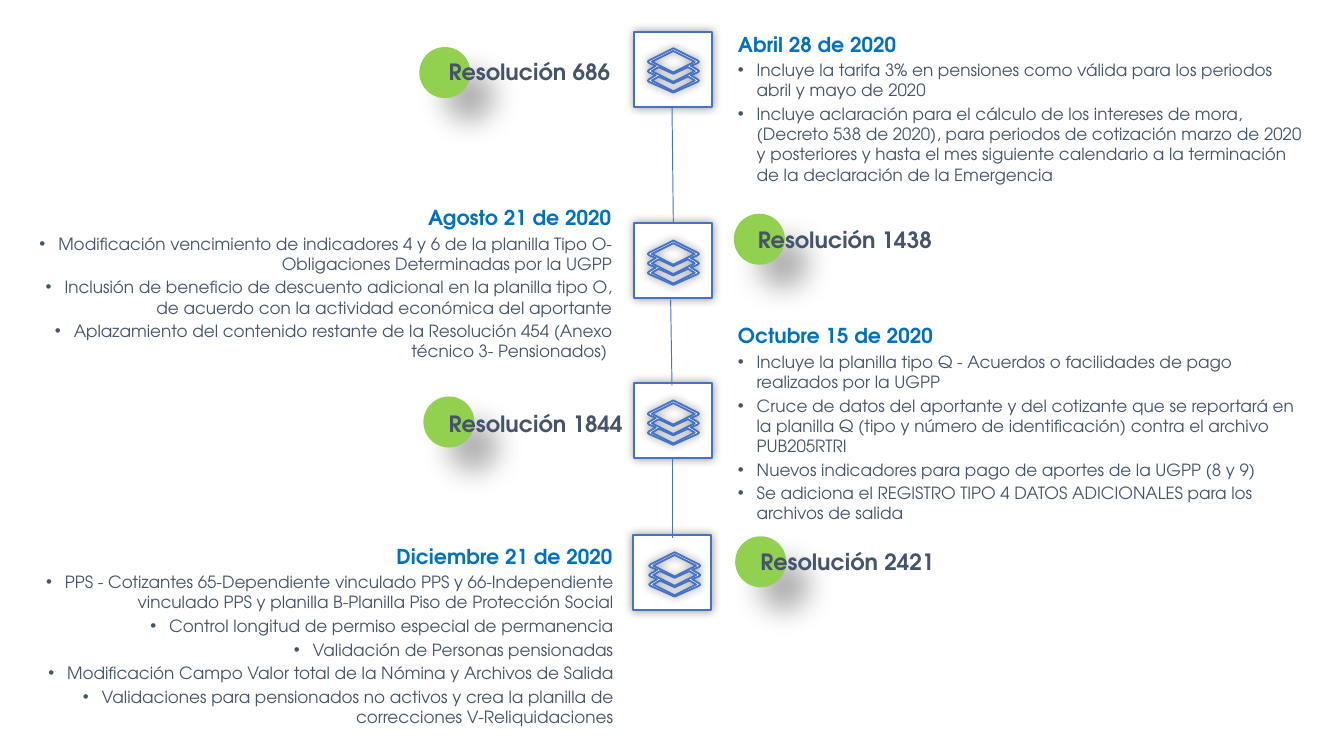
from dataclasses import dataclass

from lxml import etree
from pptx import Presentation
from pptx import util as u
from pptx.dml.color import RGBColor
from pptx.enum import shapes, text
from pptx.oxml.ns import qn

FONT = "TeX Gyre Adventor"
COLORS = {
    "background": "FFFFFF",
    "accent": "4472C4",
    "dot": "92D050",
    "date": "0070C0",
    "body": "44546A",
    "shadow": "000000",
}

# The 16:9 slide is a grid of square cells, 100 columns wide and 56.25 rows high.
COLUMNS, ROWS = 100, 56.25
CELL = u.Inches(10) / COLUMNS

NODE_WIDTH, NODE_HEIGHT = 5.8, 5.6
DOT_SIZE = 3.8
LABEL_HEIGHT = 3
NOTE_INSETS = (1.8, 0.9)

# Icon outlines in tenths of a cell, from the top centre of the icon.
RIGHT_EDGE = [
    (0, 0), (18, 9), (19, 10), (18, 11), (13, 13), (18, 16), (19, 17),
    (18, 18), (13, 20), (18, 23), (19, 24), (18, 25), (0, 33),
]
OUTLINE = RIGHT_EDGE + [(-x, y) for x, y in RIGHT_EDGE[-2:0:-1]]
TOP_SHEET = [(0, 2), (-16, 10), (0, 18), (16, 10)]
MIDDLE_SHEET = [(0, 25), (-16, 17), (-11, 14), (0, 19), (11, 14), (16, 17)]
BOTTOM_SHEET = [(x, y + 7) for x, y in MIDDLE_SHEET]


@dataclass(frozen=True)
class Shadow:
    opacity: int
    blur: float
    distance: float
    angle: int


@dataclass(frozen=True)
class Box:
    left: float
    top: float
    width: float
    height: float


@dataclass(frozen=True)
class Milestone:
    resolution: str
    date: str
    changes: tuple[str, ...]
    node_center: tuple[float, float]
    icon_top: tuple[float, float]
    dot: tuple[float, float]
    label: Box
    note: Box
    note_align: text.PP_ALIGN


GLOW = Shadow(40, 5, 0, 0)
DROP = Shadow(30, 15, 18, 45)
LEFT, RIGHT = text.PP_ALIGN.LEFT, text.PP_ALIGN.RIGHT

MILESTONES = [
    Milestone(
        "Resolución 686", "Abril 28 de 2020",
        ("Incluye la tarifa 3% en pensiones como válida para los periodos abril y mayo de 2020",
         "Incluye aclaración para el cálculo de los intereses de mora, (Decreto 538 de 2020), "
         "para periodos de cotización marzo de 2020 y posteriores y hasta el mes siguiente "
         "calendario a la terminación de la declaración de la Emergencia"),
        (50.1, 5.2), (50.1, 3.6), (31.2, 3.5), Box(32.4, 3.8, 17.7, LABEL_HEIGHT),
        Box(53.1, 1.1, 46.2, 13.7), LEFT),
    Milestone(
        "Resolución 1438", "Agosto 21 de 2020",
        ("Modificación vencimiento de indicadores 4 y 6 de la planilla Tipo O-Obligaciones "
         "Determinadas por la UGPP",
         "Inclusión de beneficio de descuento adicional en la planilla tipo O, de acuerdo con "
         "la actividad económica del aportante",
         "Aplazamiento del contenido restante de la Resolución 454 (Anexo técnico 3- Pensionados) "),
        (50.1, 19.4), (50.1, 17.9), (54.6, 15.9), Box(55.4, 16.3, 24.6, LABEL_HEIGHT),
        Box(0, 14, 47.3, 14), RIGHT),
    Milestone(
        "Resolución 1844", "Octubre 15 de 2020",
        ("Incluye la planilla tipo Q - Acuerdos o facilidades de pago realizados por la UGPP",
         "Cruce de datos del aportante y del cotizante que se reportará en la planilla Q "
         "(tipo y número de identificación) contra el archivo PUB205RTRI",
         "Nuevos indicadores para pago de aportes de la UGPP (8 y 9)",
         "Se adiciona el REGISTRO TIPO 4 DATOS ADICIONALES para los archivos de salida"),
        (50.1, 31.3), (50.1, 29.8), (31.5, 29.5), Box(32.4, 30, 17.7, LABEL_HEIGHT),
        Box(53.1, 22.8, 46.2, 17.4), LEFT),
    Milestone(
        "Resolución 2421", "Diciembre 21 de 2020",
        ("PPS - Cotizantes 65-Dependiente vinculado PPS y 66-Independiente vinculado PPS y "
         "planilla B-Planilla Piso de Protección Social",
         "Control longitud de permiso especial de permanencia",
         "Validación de Personas pensionadas",
         "Modificación Campo Valor total de la Nómina y Archivos de Salida",
         "Validaciones para pensionados no activos y crea la planilla de correcciones "
         "V-Reliquidaciones"),
        (50, 42.6), (50.2, 41.1), (54.7, 39.9), Box(55.6, 40.3, 24.6, LABEL_HEIGHT),
        Box(0.1, 39.2, 47.3, 16.1), RIGHT),
]
LINKS = [(50, 7.9, 50.1, 16.6), (49.9, 22.3, 50, 28.7), (50, 34.1, 50, 40)]


def cells(*counts: float) -> list[int]:
    """Convert numbers of grid cells to slide lengths."""
    return [u.Emu(round(count * CELL)) for count in counts]


def color(name: str) -> RGBColor:
    return RGBColor.from_string(COLORS[name])


def add_effects(shape, shadow: Shadow | None = None) -> None:
    """Replace the theme effects with the given shadow, or with none."""
    effects = etree.SubElement(shape._element.spPr, qn("a:effectLst"))
    if shadow is None:
        return
    outer = etree.SubElement(
        effects, qn("a:outerShdw"), blurRad=str(u.Pt(shadow.blur)),
        dist=str(u.Pt(shadow.distance)), dir=str(shadow.angle * 60000),
        algn="ctr", rotWithShape="0")
    tint = etree.SubElement(outer, qn("a:srgbClr"), val=COLORS["shadow"])
    etree.SubElement(tint, qn("a:alpha"), val=str(shadow.opacity * 1000))


def paint(shape, fill: str, line: str | None, shadow: Shadow) -> None:
    shape.fill.solid()
    shape.fill.fore_color.rgb = color(fill)
    if line is None:
        shape.line.fill.background()
    else:
        shape.line.color.rgb = color(line)
        shape.line.width = u.Pt(1)
    add_effects(shape, shadow)


def add_node(slide, milestone: Milestone) -> None:
    """Draw a framed icon of stacked sheets."""
    x, y = milestone.node_center
    frame = slide.shapes.add_shape(
        shapes.MSO_SHAPE.RECTANGLE,
        *cells(x - NODE_WIDTH / 2, y - NODE_HEIGHT / 2, NODE_WIDTH, NODE_HEIGHT))
    paint(frame, "background", "accent", GLOW)
    builder = slide.shapes.build_freeform(*OUTLINE[0], scale=CELL / 10)
    builder.add_line_segments(OUTLINE[1:])
    for sheet in (TOP_SHEET, MIDDLE_SHEET, BOTTOM_SHEET):
        builder.move_to(*sheet[0])
        builder.add_line_segments(sheet[1:])
    icon = builder.convert_to_shape(*cells(*milestone.icon_top))
    paint(icon, "background", "accent", GLOW)


def add_text_box(slide, box: Box):
    frame = slide.shapes.add_textbox(*cells(box.left, box.top, box.width, box.height)).text_frame
    frame.word_wrap = True
    frame.auto_size = text.MSO_AUTO_SIZE.SHAPE_TO_FIT_TEXT
    return frame


def format_runs(paragraph, size: float, color_name: str, bold: bool) -> None:
    for run in paragraph.runs:
        run.font.name = FONT
        run.font.size = u.Pt(size)
        run.font.bold = bold
        run.font.color.rgb = color(color_name)


def add_bullet(paragraph) -> None:
    properties = paragraph._p.get_or_add_pPr()
    indent = u.Inches(0.14)
    properties.set("marL", str(indent))
    properties.set("indent", str(-indent))
    etree.SubElement(properties, qn("a:buFont"), typeface="Arial")
    etree.SubElement(properties, qn("a:buChar"), char="•")


def add_label(slide, milestone: Milestone) -> None:
    dot = slide.shapes.add_shape(
        shapes.MSO_SHAPE.OVAL, *cells(*milestone.dot, DOT_SIZE, DOT_SIZE))
    paint(dot, "dot", None, DROP)
    frame = add_text_box(slide, milestone.label)
    frame.vertical_anchor = text.MSO_ANCHOR.MIDDLE
    frame.text = milestone.resolution
    format_runs(frame.paragraphs[0], 12, "body", True)


def add_note(slide, milestone: Milestone) -> None:
    frame = add_text_box(slide, milestone.note)
    side, edge = cells(*NOTE_INSETS)
    frame.margin_left = frame.margin_right = side
    frame.margin_top = frame.margin_bottom = edge
    heading = frame.paragraphs[0]
    heading.text = milestone.date
    heading.alignment = milestone.note_align
    heading.line_spacing = 1.2
    format_runs(heading, 11, "date", True)
    for change in milestone.changes:
        paragraph = frame.add_paragraph()
        paragraph.text = change
        add_bullet(paragraph)
        paragraph.alignment = milestone.note_align
        paragraph.space_before = u.Pt(1.8)
        format_runs(paragraph, 9, "body", False)


def add_link(slide, ends: tuple[float, float, float, float]) -> None:
    link = slide.shapes.add_connector(shapes.MSO_CONNECTOR.STRAIGHT, *cells(*ends))
    link.line.color.rgb = color("accent")
    link.line.width = u.Pt(0.5)
    add_effects(link)


def main() -> None:
    presentation = Presentation()
    presentation.slide_width, presentation.slide_height = cells(COLUMNS, ROWS)
    slide = presentation.slides.add_slide(presentation.slide_layouts[6])
    for milestone in MILESTONES:
        add_node(slide, milestone)
        add_label(slide, milestone)
        add_note(slide, milestone)
    for ends in LINKS:
        add_link(slide, ends)
    presentation.save("out.pptx")


if __name__ == "__main__":
    main()
